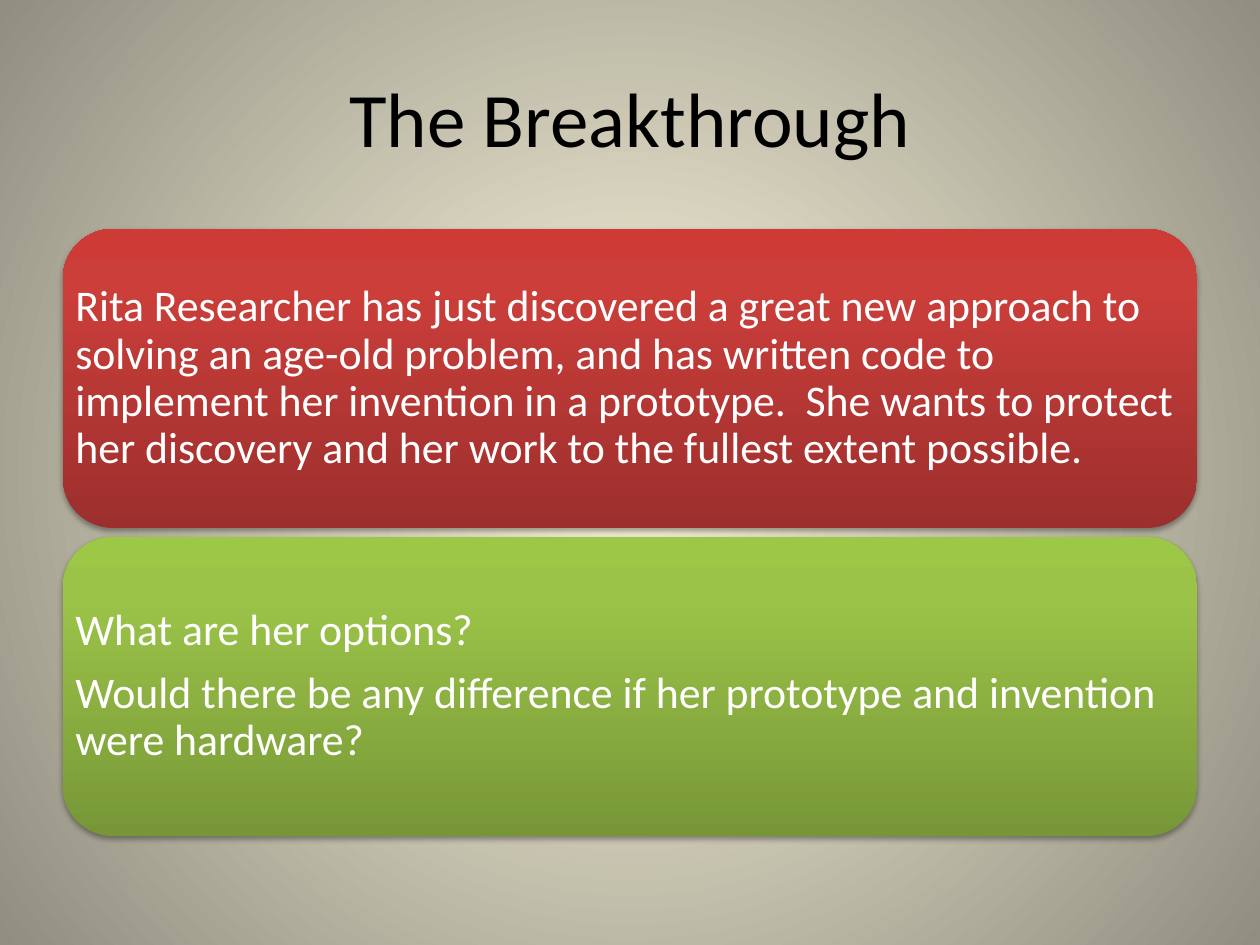
from lxml.etree import SubElement
from pptx import Presentation
from pptx.dml.color import RGBColor
from pptx.enum.shapes import MSO_SHAPE as Shape
from pptx.enum.text import MSO_ANCHOR as Anchor, PP_ALIGN as Align
from pptx.oxml.ns import qn
from pptx.util import Inches, Pt

PX = Inches(1) / 126
FONT = "Calibri"

# Content
TITLE = "The Breakthrough"
PANELS = [
    {
        "stops": [(0, "9C2F2D"), (80, "CB3E3A"), (100, "CE3B37")],
        "lines": [
            "Rita Researcher has just discovered a great new approach to solving "
            "an age-old problem, and has written code to implement her invention "
            "in a prototype.  She wants to protect her discovery and her work to "
            "the fullest extent possible."
        ],
    },
    {
        "stops": [(0, "779737"), (80, "9BC348"), (100, "9DC746")],
        "lines": [
            "What are her options?",
            "Would there be any difference if her prototype and invention "
            "were hardware?",
        ],
    },
]
BACKDROP = [(0, "FCF7DD"), (100, "918E81")]

# Layout in px
SLIDE_W, SLIDE_H = 1260, 945
MARGIN = 63
WIDTH = SLIDE_W - 2 * MARGIN
TITLE_TOP, TITLE_H = 38, 157
PANEL_TOP, PANEL_H, PANEL_GAP = 229, 299, 9


def px(*lengths):
    return [round(length * PX) for length in lengths]


def color(hex_code):
    return RGBColor.from_string(hex_code)


def add(parent, tag, **attributes):
    return SubElement(parent, qn(tag), {k: str(v) for k, v in attributes.items()})


def set_gradient(fill, element, stops, angle=None):
    """Linear at the given angle, or circular from the centre without one."""
    fill.gradient()
    gradient = next(element.iter(qn("a:gradFill")))
    for child in list(gradient):
        gradient.remove(child)
    stop_list = add(gradient, "a:gsLst")
    for percent, hex_code in stops:
        stop = add(stop_list, "a:gs", pos=percent * 1000)
        add(stop, "a:srgbClr", val=hex_code)
    if angle is None:
        path = add(gradient, "a:path", path="circle")
        add(path, "a:fillToRect", l=50000, t=50000, r=50000, b=50000)
    else:
        add(gradient, "a:lin", ang=angle * 60000, scaled=0)


def set_shadow(shape):
    shape.shadow.inherit = False
    effects = next(shape.element.iter(qn("a:effectLst")))
    shadow = add(effects, "a:outerShdw", blurRad=Pt(3.1), dist=Pt(1.8),
                 dir=90 * 60000, rotWithShape=0)
    add(add(shadow, "a:srgbClr", val="000000"), "a:alpha", val=35000)


def write(frame, lines, size, hex_code, align, spacing=1.0, after=0, margin=None):
    frame.word_wrap = True
    frame.vertical_anchor = Anchor.MIDDLE
    if margin is not None:
        frame.margin_left = frame.margin_right = margin
        frame.margin_top = frame.margin_bottom = margin
    for index, line in enumerate(lines):
        paragraph = frame.add_paragraph() if index else frame.paragraphs[0]
        paragraph.alignment = align
        paragraph.line_spacing = spacing
        paragraph.space_after = Pt(after)
        run = paragraph.add_run()
        run.text = line
        run.font.name, run.font.size = FONT, Pt(size)
        run.font.color.rgb = color(hex_code)


def add_panel(slide, top, stops, lines):
    box = px(MARGIN, top, WIDTH, PANEL_H)
    panel = slide.shapes.add_shape(Shape.ROUNDED_RECTANGLE, *box)
    set_gradient(panel.fill, panel.element, stops, angle=270)
    panel.line.fill.background()
    set_shadow(panel)
    # The text spans the full panel, free of the corner inset
    words = slide.shapes.add_textbox(*box)
    write(words.text_frame, lines, 25, "FFFFFF", Align.LEFT,
          spacing=0.9, after=8.75, margin=Inches(0.1))


def main():
    deck = Presentation()
    deck.slide_width, deck.slide_height = px(SLIDE_W, SLIDE_H)
    slide = deck.slides.add_slide(deck.slide_layouts[5])
    set_gradient(slide.background.fill, slide.element, BACKDROP)

    # Title
    title = slide.shapes.title
    title.left, title.top, title.width, title.height = px(
        MARGIN, TITLE_TOP, WIDTH, TITLE_H)
    write(title.text_frame, [TITLE], 44, "000000", Align.CENTER)

    # Stacked panels
    for row, panel in enumerate(PANELS):
        add_panel(slide, PANEL_TOP + row * (PANEL_H + PANEL_GAP), **panel)

    deck.save("out.pptx")


if __name__ == "__main__":
    main()
